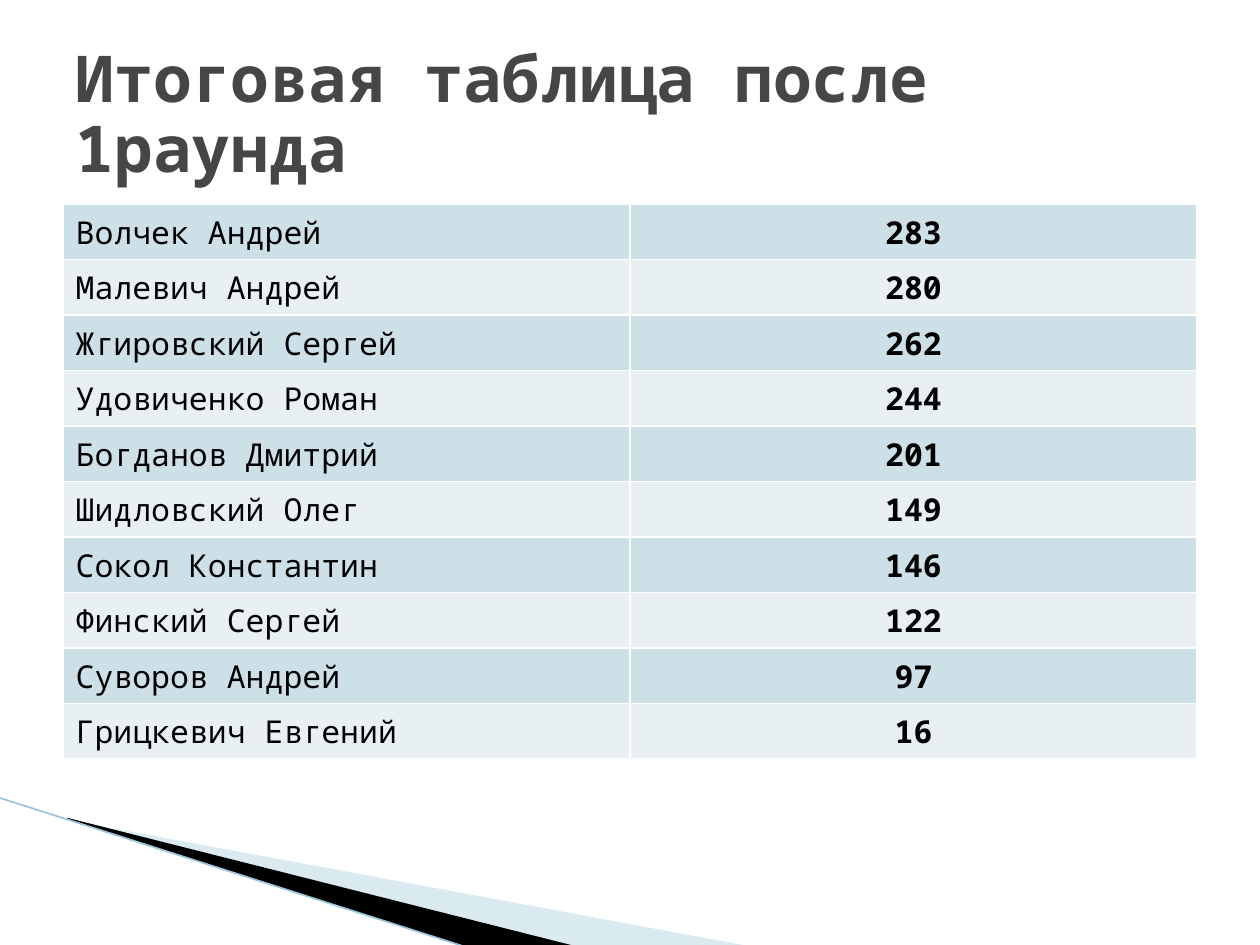
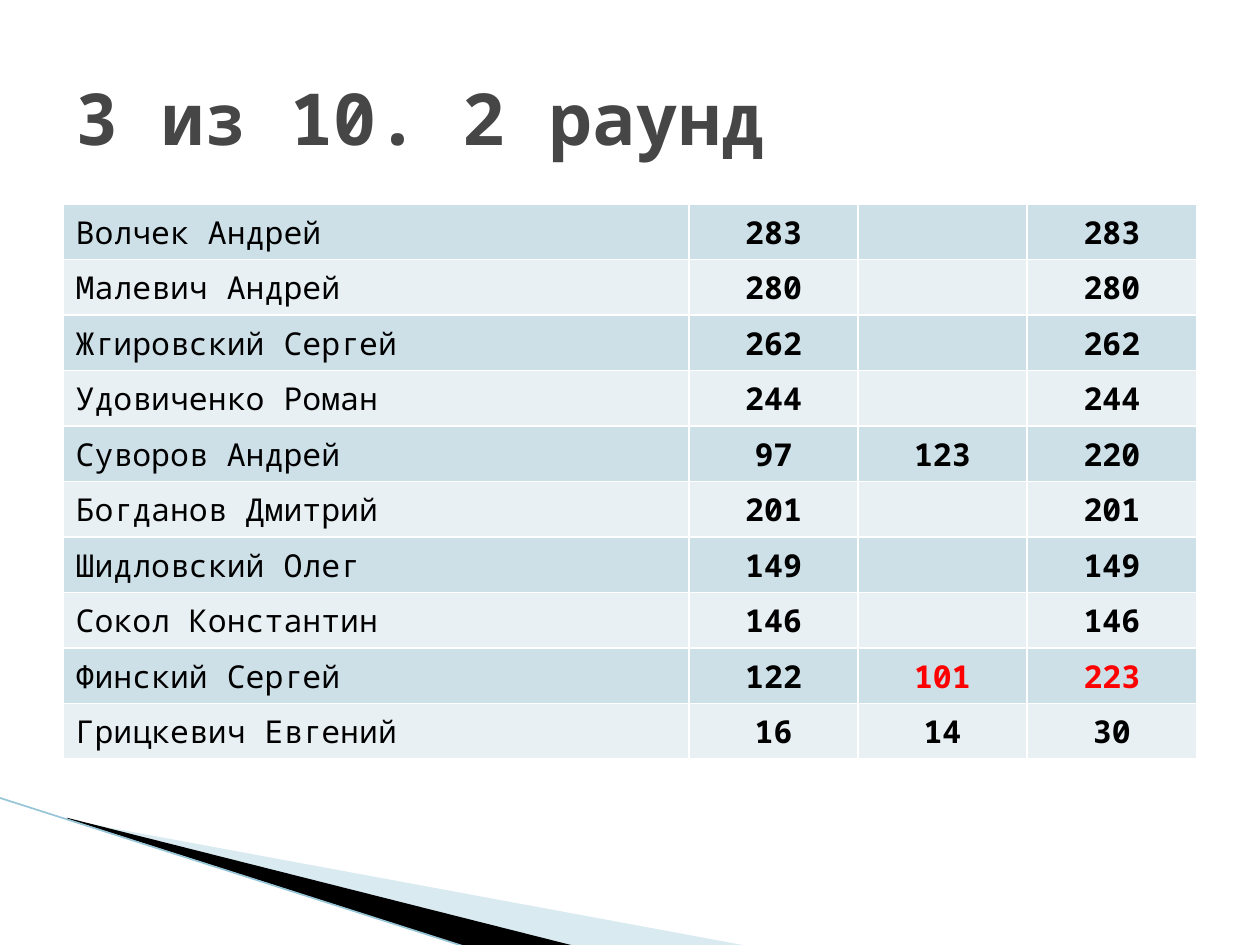
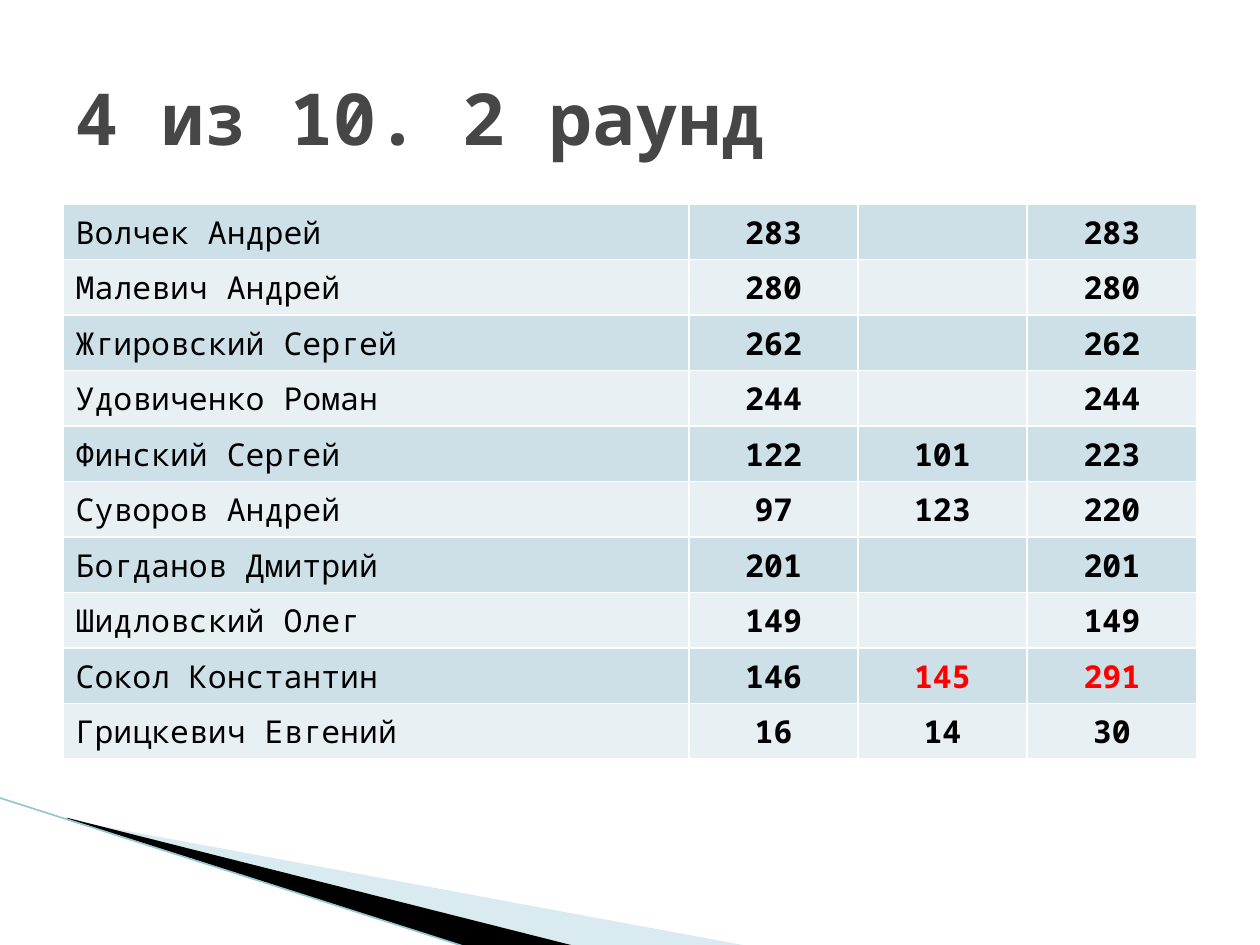
from dataclasses import dataclass

from lxml import etree
from pptx import Presentation
from pptx.dml.color import RGBColor
from pptx.enum.shapes import MSO_CONNECTOR
from pptx.enum.text import MSO_ANCHOR, MSO_AUTO_SIZE, PP_ALIGN
from pptx.oxml.ns import qn
from pptx.slide import Slide, SlideLayout
from pptx.table import _Cell
from pptx.text.text import Font
from pptx.util import Pt

PX = 9144
FONT = "Noto Sans Mono"
WHITE = RGBColor(0xFF, 0xFF, 0xFF)
BLACK = RGBColor(0x00, 0x00, 0x00)
GRAY = RGBColor(0x46, 0x46, 0x46)
RED = RGBColor(0xFF, 0x00, 0x00)
SKY = RGBColor(0xA0, 0xCB, 0xDC)
EDGE = RGBColor(0x97, 0xC5, 0xD8)
BANDS = (RGBColor(0xCD, 0xE0, 0xE8), RGBColor(0xE8, 0xF0, 0xF4))

LEFT, CENTER = PP_ALIGN.LEFT, PP_ALIGN.CENTER
MIDDLE = MSO_ANCHOR.MIDDLE
NO_FIT = MSO_AUTO_SIZE.NONE
STRAIGHT = MSO_CONNECTOR.STRAIGHT

TITLE_BOX = (50, 30, 900, 125)
TABLE_LEFT, TABLE_TOP, ROW = 50, 162, 41


@dataclass(frozen=True)
class Wedge:
    points: tuple[tuple[int, int], ...]
    color: RGBColor
    alpha: int = 100


@dataclass(frozen=True)
class Page:
    title: str
    size: float
    space: float
    widths: tuple[int, ...]
    second: dict[str, int]
    fresh: str = ""


WEDGES = (
    Wedge(((55, 651), (595, 751), (456, 751), (55, 650)), SKY, 40),
    Wedge(((53, 649), (457, 751), (372, 752), (54, 650)), BLACK),
)
EDGE_LINE = (-1, 633, 371, 752)

FIRST = {
    "Волчек Андрей": 283,
    "Малевич Андрей": 280,
    "Жгировский Сергей": 262,
    "Удовиченко Роман": 244,
    "Богданов Дмитрий": 201,
    "Шидловский Олег": 149,
    "Сокол Константин": 146,
    "Финский Сергей": 122,
    "Суворов Андрей": 97,
    "Грицкевич Евгений": 16,
}
TWO = {"Суворов Андрей": 123, "Грицкевич Евгений": 14}
THREE = TWO | {"Финский Сергей": 101}
FOUR = THREE | {"Сокол Константин": 145}
WIDE = (497, 134, 134, 135)

PAGES = (
    Page("Итоговая таблица после 1раунда", 36.9, 0.9, (450, 450), {}),
    Page("3 из 10. 2 раунд", 41, 1.0, WIDE, THREE, "Финский Сергей"),
    Page("4 из 10. 2 раунд", 41, 1.0, WIDE, FOUR, "Сокол Константин"),
)


def style(font: Font, size: float, color: RGBColor, bold: bool) -> None:
    for key, value in {"name": FONT, "size": Pt(size), "bold": bold}.items():
        setattr(font, key, value)
    font.color.rgb = color


def draw_wedge(slide: Slide, wedge: Wedge):
    start, *rest = wedge.points
    path = slide.shapes.build_freeform(*start, scale=PX)
    path.add_line_segments(rest, close=True)
    shape = path.convert_to_shape()
    shape.shadow.inherit = False
    shape.fill.solid()
    shape.fill.fore_color.rgb = wedge.color
    shape.line.fill.background()
    if wedge.alpha < 100:
        tone = shape.element.spPr.find(qn("a:solidFill"))[0]
        etree.SubElement(tone, qn("a:alpha"), val=str(wedge.alpha * 1000))
    return shape


def draw_edge(slide: Slide):
    line = slide.shapes.add_connector(STRAIGHT, *(v * PX for v in EDGE_LINE))
    line.line.color.rgb = EDGE
    line.line.width = Pt(0.95)
    etree.SubElement(line.element.spPr, qn("a:effectLst"))
    return line


def share_decor(slide: Slide, layout: SlideLayout) -> None:
    tree = layout.shapes.element if hasattr(layout.shapes, "element") else layout.element.cSld.spTree
    for holder in list(layout.placeholders)[1:]:
        tree.remove(holder.element)
    decor = [draw_wedge(slide, wedge) for wedge in WEDGES] + [draw_edge(slide)]
    for shape in decor:
        tree.append(shape.element)


def draw_title(slide: Slide, page: Page) -> None:
    title = slide.shapes.title
    for key, value in zip(("left", "top", "width", "height"), TITLE_BOX):
        setattr(title, key, value * PX)
    frame = title.text_frame
    frame.text = page.title
    for key, value in {"word_wrap": True, "auto_size": NO_FIT, "vertical_anchor": MIDDLE}.items():
        setattr(frame, key, value)
    line = frame.paragraphs[0]
    line.alignment = LEFT
    line.line_spacing = page.space
    style(line.runs[0].font, page.size, GRAY, True)


def add_border(cell: _Cell) -> None:
    props = cell._tc.get_or_add_tcPr()
    for spot, side in enumerate(("lnL", "lnR", "lnT", "lnB")):
        line = etree.Element(qn(f"a:{side}"), w=str(Pt(1)))
        fill = etree.SubElement(line, qn("a:solidFill"))
        etree.SubElement(fill, qn("a:srgbClr"), val=str(WHITE))
        props.insert(spot, line)


def fill_cell(cell: _Cell, text: str, band: RGBColor, color: RGBColor, score: bool) -> None:
    cell.fill.solid()
    cell.fill.fore_color.rgb = band
    add_border(cell)
    line = cell.text_frame.paragraphs[0]
    line.alignment = CENTER if score else LEFT
    if text:
        run = line.add_run()
        run.text = text
        style(run.font, 18, color, score)


def rank(page: Page) -> list[str]:
    def total(name: str) -> int:
        extra = 0 if name == page.fresh else page.second.get(name, 0)
        return FIRST[name] + extra

    return sorted(FIRST, key=total, reverse=True)


def draw_table(slide: Slide, page: Page) -> None:
    count = len(page.widths)
    box = (TABLE_LEFT, TABLE_TOP, sum(page.widths), ROW * len(FIRST))
    table = slide.shapes.add_table(len(FIRST), count, *(v * PX for v in box)).table
    table.first_row = table.horz_banding = False
    for col, width in zip(table.columns, page.widths):
        col.width = width * PX
    for row, name in enumerate(rank(page)):
        extra = page.second.get(name, 0)
        texts = (name, str(FIRST[name]), str(extra or ""), str(FIRST[name] + extra))
        for col, text in enumerate(texts[:count]):
            color = RED if name == page.fresh and col > 1 else BLACK
            fill_cell(table.cell(row, col), text, BANDS[row % 2], color, col > 0)


def main() -> None:
    deck = Presentation()
    deck.slide_width, deck.slide_height = 1000 * PX, 750 * PX
    layout = deck.slide_layouts[5]
    for page in PAGES:
        slide = deck.slides.add_slide(layout)
        if page is PAGES[0]:
            share_decor(slide, layout)
        draw_title(slide, page)
        draw_table(slide, page)
    deck.save("out.pptx")


if __name__ == "__main__":
    main()
